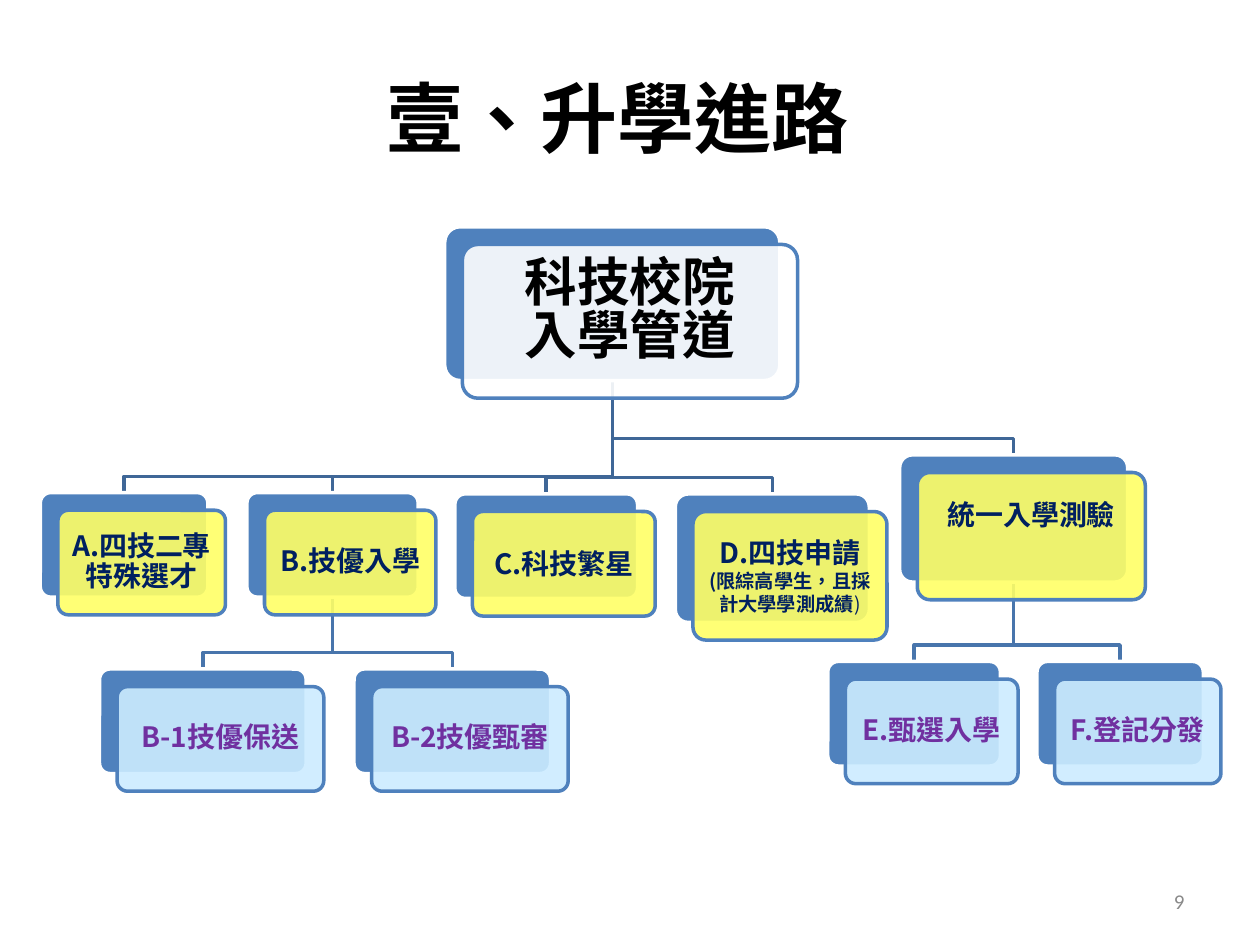
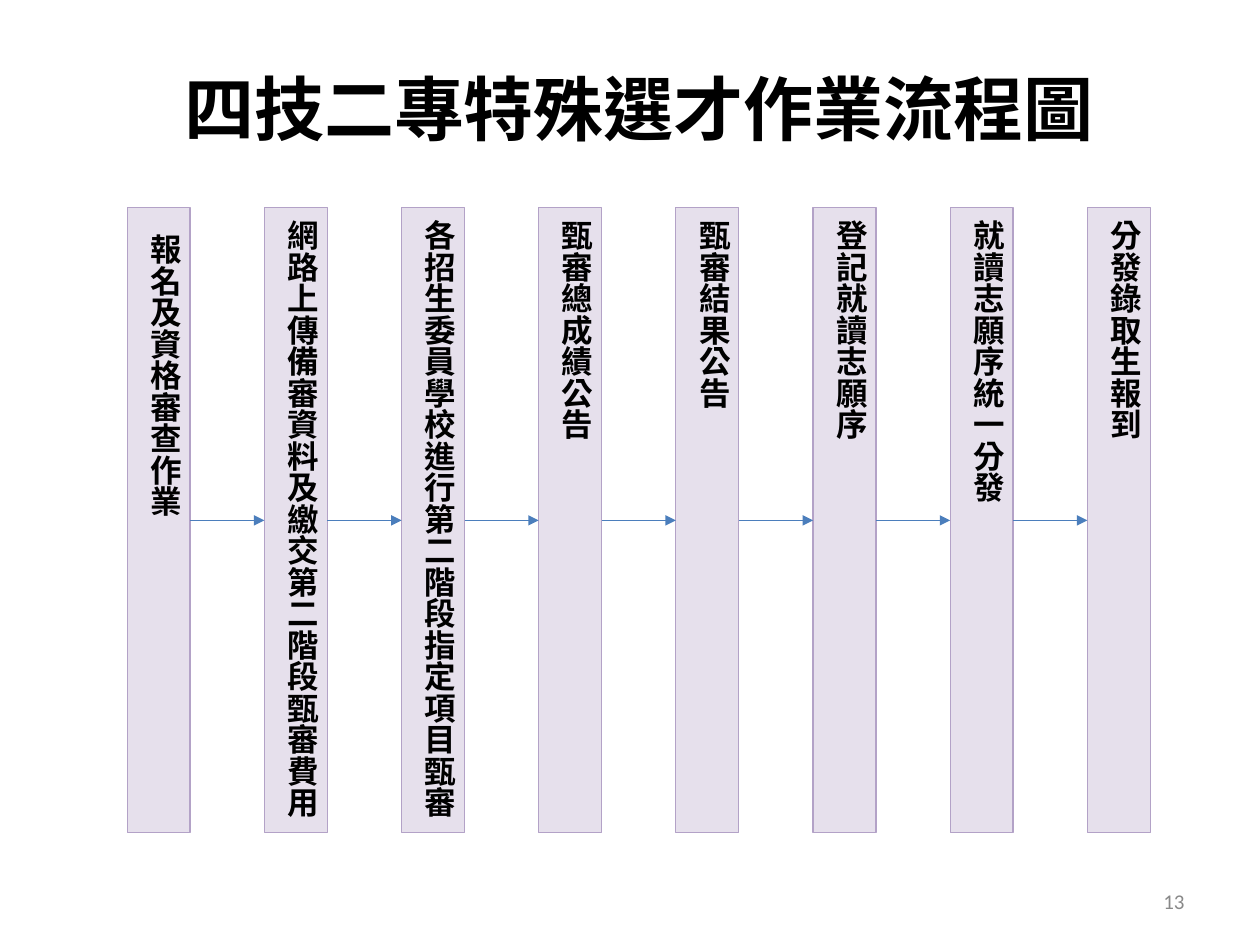
import pptx
import pptx.dml.color
import pptx.enum.shapes
import pptx.enum.text
import pptx.oxml.ns
import pptx.util
import lxml.etree

Inches, Pt = pptx.util.Inches, pptx.util.Pt
SHAPE = pptx.enum.shapes.MSO_SHAPE
ALIGN = pptx.enum.text.PP_ALIGN
ANCHOR = pptx.enum.text.MSO_ANCHOR
qn = pptx.oxml.ns.qn

WIDTH, HEIGHT = 10, 7.5
CJK, LATIN = "Noto Sans CJK SC", "Calibri"
COLOURS = {
    "black": "000000", "number": "898989", "white": "FFFFFF", "card": "4F81BD",
    "yellow": "FFFF66", "sky": "CCECFF", "navy": "002060", "purple": "7030A0",
    "upper_link": "3F6797", "lower_link": "4875AC",
    "step": "E6E0EC", "step_edge": "B3A2C7", "arrow": "4B7EBC",
}
FRONT_SHIFT = 0.14
ELBOW = 0.13

TREE_TITLE = ("壹、升學進路", 44, (1.12, 0.3, 7.57, 1.25))
FLOW_TITLE = ("四技二專特殊選才作業流程圖", 40, (0.57, 0.23, 9, 1.25))

LEVELS = {
    "root": ("white", "black", 30),
    "route": ("yellow", "navy", 16),
    "branch": ("sky", "purple", 16),
}
CHANNELS = {
    "root": ("root", None, (3.53, 1.8, 2.66, 1.22), ["科技校院", "入學管道"], 1),
    "A": ("route", "root", (0.32, 3.91, 1.33, 0.83), ["A.四技二專\v特殊選才"], 0.9),
    "B": ("route", "root", (1.96, 3.91, 1.36, 0.83), ["B.技優入學"], 0.9),
    "B-1": ("branch", "B", (0.79, 5.31, 1.64, 0.83), ["B-1技優保送"], 0.9),
    "B-2": ("branch", "B", (2.81, 5.31, 1.56, 0.83), ["B-2技優甄審"], 0.9),
    "D": ("route", "root", (5.36, 3.92, 1.54, 1.02),
          [[("D.四技申請\v", 16, True), ("(限綜高學生，且採計大學學測成績", 11, True),
            (")", 11, False)]], 1),
    "C": ("route", "root", (3.61, 3.92, 1.45, 0.83), ["C.科技繁星"], 1),
    "test": ("route", "root", (7.14, 3.61, 1.81, 1.01), ["統一入學測驗"], 1),
    "E": ("branch", "test", (6.57, 5.25, 1.37, 0.83), ["E.甄選入學"], 0.9),
    "F": ("branch", "test", (8.23, 5.25, 1.32, 0.83), ["F.登記分發"], 0.9),
}

STEPS = [
    "報名及資格審查作業",
    "網路上傳備審資料及繳交第二階段甄審費用",
    "各招生委員學校進行第二階段指定項目甄審",
    "甄審總成績公告",
    "甄審結果公告",
    "登記就讀志願序",
    "就讀志願序統一分發",
    "分發錄取生報到",
]
FIRST_STEP, LAST_STEP = 1.01, 8.63
STEP_TOP, STEP_WIDTH, STEP_HEIGHT = 1.65, 0.5, 4.96


def colour(name):
    return pptx.dml.color.RGBColor.from_string(COLOURS[name])


def place(area):
    return [Inches(length) for length in area]


def add_span(para, text, size, ink, bold=True, face=CJK):
    for index, piece in enumerate(text.split("\v")):
        if index:
            para.add_line_break()
        if not piece:
            continue
        span = para.add_run()
        span.text = piece
        span.font.size = Pt(size)
        span.font.bold = bold
        span.font.color.rgb = colour(ink)
        span.font.name = face
        properties = span._r.get_or_add_rPr()
        properties.set("lang", "zh-TW")
        lxml.etree.SubElement(properties, qn("a:ea")).set("typeface", face)


def add_label(page, text, size, area, ink, align, bold=True, face=CJK):
    frame = page.shapes.add_textbox(*place(area)).text_frame
    frame.word_wrap = True
    frame.vertical_anchor = ANCHOR.MIDDLE
    frame.paragraphs[0].alignment = align
    add_span(frame.paragraphs[0], text, size, ink, bold, face)


def add_page(deck, title, number):
    page = deck.slides.add_slide(deck.slide_layouts[6])
    add_label(page, *title, "black", ALIGN.CENTER)
    add_label(page, number, 12, (7.17, 6.95, 2.33, 0.4), "number", ALIGN.RIGHT, False, LATIN)
    return page


def add_box(page, kind, area, fill, edge, weight):
    box = page.shapes.add_shape(kind, *place(area))
    box.shadow.inherit = False
    box.fill.solid()
    box.fill.fore_color.rgb = colour(fill)
    box.line.color.rgb = colour(edge)
    box.line.width = Pt(weight)
    return box


def add_link(page, parent, child, ink):
    left, top, width, height = parent
    start_x, start_y = left + width / 2, top + height
    end_x, end_y = child[0] + child[2] / 2, child[1]
    bend = end_y - ELBOW
    builder = page.shapes.build_freeform(Inches(start_x), Inches(start_y))
    corners = [(start_x, bend), (end_x, bend), (end_x, end_y)]
    builder.add_line_segments([place(corner) for corner in corners], close=False)
    link = builder.convert_to_shape()
    link.shadow.inherit = False
    link.fill.background()
    link.line.color.rgb = colour(ink)
    link.line.width = Pt(2)


def add_card(page, name):
    level, _, area, paragraphs, spacing = CHANNELS[name]
    fill, ink, size = LEVELS[level]
    left, top, width, height = area
    back = add_box(page, SHAPE.ROUNDED_RECTANGLE, area, "card", "white", 2)
    front = add_box(page, SHAPE.ROUNDED_RECTANGLE,
                    (left + FRONT_SHIFT, top + FRONT_SHIFT, width, height), fill, "card", 2)
    back.adjustments[0] = front.adjustments[0] = 0.1
    tint = front._element.spPr.find(".//" + qn("a:srgbClr"))
    lxml.etree.SubElement(tint, qn("a:alpha")).set("val", "90000")

    frame = front.text_frame
    frame.word_wrap = True
    frame.vertical_anchor = ANCHOR.MIDDLE
    inset = Inches(0.12 if level == "root" else 0.07)
    frame.margin_left = frame.margin_right = frame.margin_top = frame.margin_bottom = inset
    if name == "test":
        frame.margin_bottom = Inches(0.41)
    for index, content in enumerate(paragraphs):
        para = frame.add_paragraph() if index else frame.paragraphs[0]
        para.alignment = ALIGN.CENTER
        para.line_spacing = Pt(20) if level == "root" else spacing
        if index:
            para.space_before = Pt(10.5)
        spans = [(content, size, True)] if isinstance(content, str) else content
        for text, span_size, bold in spans:
            add_span(para, text, span_size, ink, bold)


def add_step(page, index, text):
    pitch = (LAST_STEP - FIRST_STEP) / (len(STEPS) - 1)
    area = (FIRST_STEP + index * pitch, STEP_TOP, STEP_WIDTH, STEP_HEIGHT)
    box = add_box(page, SHAPE.RECTANGLE, area, "step", "step_edge", 0.75)
    frame = box.text_frame
    frame.word_wrap = True
    frame.vertical_anchor = ANCHOR.TOP
    frame.auto_size = pptx.enum.text.MSO_AUTO_SIZE.SHAPE_TO_FIT_TEXT
    frame._txBody.bodyPr.set("vert", "eaVert")
    para = frame.paragraphs[0]
    para.alignment = ALIGN.CENTER
    if index == 0:
        properties = para._p.get_or_add_pPr()
        properties.set("marL", str(Inches(0.09)))
        properties.set("indent", str(Inches(-0.13)))
    add_span(para, text, 18, "black")
    return box


def add_arrow(page, source, target):
    arrow = page.shapes.add_connector(pptx.enum.shapes.MSO_CONNECTOR.STRAIGHT, 0, 0, 0, 0)
    arrow.begin_connect(source, 3)
    arrow.end_connect(target, 1)
    arrow.line.color.rgb = colour("arrow")
    arrow.line.width = Pt(0.75)
    outline = arrow.line._get_or_add_ln()
    lxml.etree.SubElement(outline, qn("a:tailEnd")).set("type", "triangle")
    lxml.etree.SubElement(arrow._element.spPr, qn("a:effectLst"))


def main():
    deck = pptx.Presentation()
    deck.slide_width, deck.slide_height = Inches(WIDTH), Inches(HEIGHT)

    page = add_page(deck, TREE_TITLE, "9")
    for level, parent, area, *_ in CHANNELS.values():
        if parent:
            ink = "upper_link" if level == "route" else "lower_link"
            add_link(page, CHANNELS[parent][2], area, ink)
    for name in CHANNELS:
        add_card(page, name)

    page = add_page(deck, FLOW_TITLE, "13")
    boxes = [add_step(page, index, text) for index, text in enumerate(STEPS)]
    for source, target in zip(boxes, boxes[1:]):
        add_arrow(page, source, target)

    deck.save("out.pptx")


if __name__ == "__main__":
    main()
